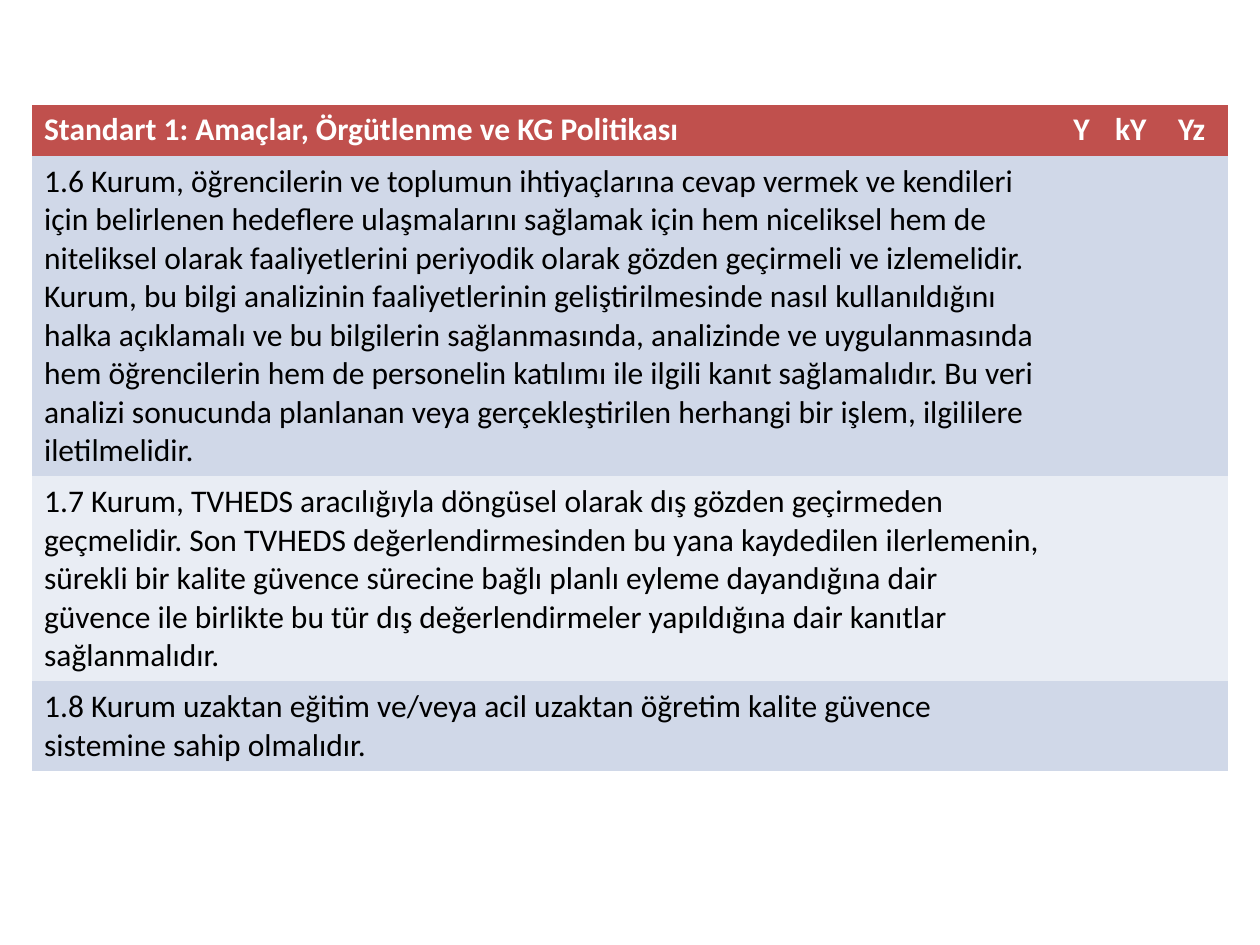
from pptx import Presentation
from pptx import util as u
from pptx.dml.color import RGBColor

COLORS = {
    "header": "C0504D",
    "odd": "D0D8E8",
    "even": "E9EDF4",
    "header_text": "FFFFFF",
    "body_text": "000000",
}
PLAIN_TABLE_STYLE = "{2D5ABB26-0587-4C30-8999-92F81FD0307C}"

HEADINGS = ["Standart 1: Amaçlar, Örgütlenme ve KG Politikası", "Y", "kY", "Yz"]
CRITERIA = [
    "1.6 Kurum, öğrencilerin ve toplumun ihtiyaçlarına cevap vermek ve kendileri "
    "için belirlenen hedeflere ulaşmalarını sağlamak için hem niceliksel hem de "
    "niteliksel olarak faaliyetlerini periyodik olarak gözden geçirmeli ve izlemelidir. "
    "Kurum, bu bilgi analizinin faaliyetlerinin geliştirilmesinde nasıl kullanıldığını "
    "halka açıklamalı ve bu bilgilerin sağlanmasında, analizinde ve uygulanmasında "
    "hem öğrencilerin hem de personelin katılımı ile ilgili kanıt sağlamalıdır. Bu veri "
    "analizi sonucunda planlanan veya gerçekleştirilen herhangi bir işlem, ilgililere "
    "iletilmelidir.",
    "1.7 Kurum, TVHEDS aracılığıyla döngüsel olarak dış gözden geçirmeden "
    "geçmelidir. Son TVHEDS değerlendirmesinden bu yana kaydedilen ilerlemenin, "
    "sürekli bir kalite güvence sürecine bağlı planlı eyleme dayandığına dair "
    "güvence ile birlikte bu tür dış değerlendirmeler yapıldığına dair kanıtlar "
    "sağlanmalıdır.",
    "1.8 Kurum uzaktan eğitim ve/veya acil uzaktan öğretim kalite güvence "
    "sistemine sahip olmalıdır.",
]


class StandardsPage:
    font = "Calibri"
    size = u.Pt(18)

    def __init__(self, page):
        self.page = page

    def cell(self, cell, content, fill, color, bold):
        cell.fill.solid()
        cell.fill.fore_color.rgb = RGBColor.from_string(COLORS[fill])
        cell.text_frame.text = content
        para = cell.text_frame.paragraphs[0]
        para.font.size = self.size
        for span in para.runs:
            span.font.name = self.font
            span.font.size = self.size
            span.font.bold = bold
            span.font.color.rgb = RGBColor.from_string(COLORS[color])

    def table(self, rows, left, top, widths, height, row_height):
        frame = self.page.shapes.add_table(
            len(rows), len(widths), u.Inches(left), u.Inches(top),
            u.Inches(sum(widths)), u.Inches(height))
        table = frame.table
        frame._element.graphic.graphicData.tbl.tblPr.find(
            "{*}tableStyleId").text = PLAIN_TABLE_STYLE
        for column, width in zip(table.columns, widths):
            column.width = u.Inches(width)
        for index, values in enumerate(rows):
            table.rows[index].height = u.Inches(row_height)
            heading = index == 0
            fill = "header" if heading else "odd" if index % 2 else "even"
            color = "header_text" if heading else "body_text"
            for cell, value in zip(table.rows[index].cells, values):
                self.cell(cell, value, fill, color, heading)
        frame.height = u.Inches(height)


def main():
    deck = Presentation()
    deck.slide_width, deck.slide_height = u.Inches(10), u.Inches(7.5)
    page = StandardsPage(deck.slides.add_slide(deck.slide_layouts[6]))
    rows = [HEADINGS] + [[criterion, "", "", ""] for criterion in CRITERIA]
    page.table(rows, left=0.25, top=0.83, widths=[8.17, 0.33, 0.5, 0.5],
               height=5.21, row_height=0.41)
    deck.save("out.pptx")


if __name__ == "__main__":
    main()
